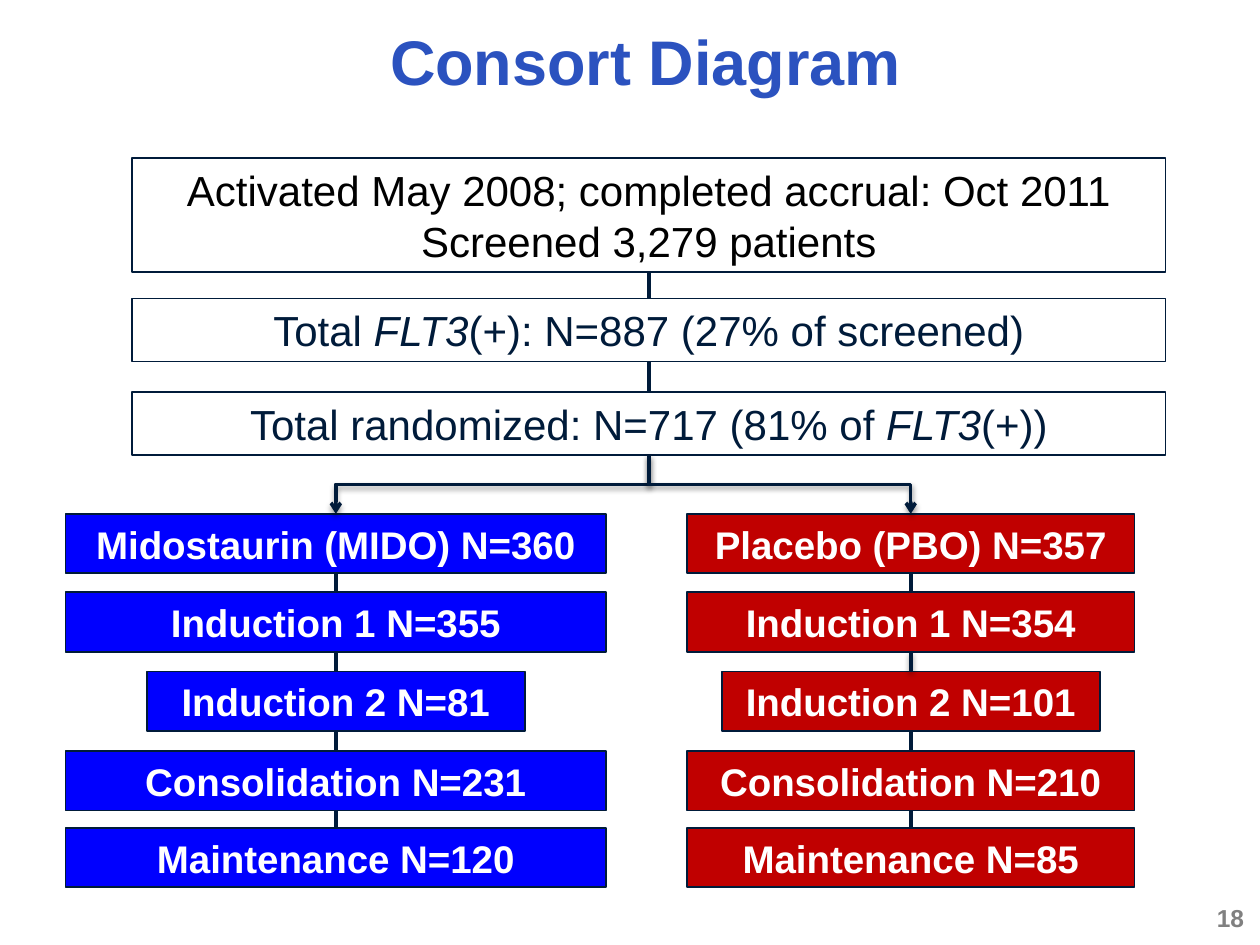
import pptx
import pptx.util
import pptx.dml.color
import pptx.enum.shapes
import pptx.enum.text
import pptx.oxml
import pptx.oxml.ns

Cm = pptx.util.Cm
Pt = pptx.util.Pt
rgb = pptx.dml.color.RGBColor.from_string
qn = pptx.oxml.ns.qn
CONNECTOR = pptx.enum.shapes.MSO_CONNECTOR
CENTER = pptx.enum.text.PP_ALIGN.CENTER
LEFT = pptx.enum.text.PP_ALIGN.LEFT
MIDDLE = pptx.enum.text.MSO_ANCHOR.MIDDLE
NAVY = "001B3A"
NAMESPACE = 'xmlns:a="http://schemas.openxmlformats.org/drawingml/2006/main"'
SHADOW = (
    '<a:outerShdw blurRad="40000" dist="20000" dir="5400000" rotWithShape="0">'
    '<a:srgbClr val="000000"><a:alpha val="38000"/></a:srgbClr></a:outerShdw>'
)


def write(frame, lines, color, font_format, align=CENTER):
    frame.word_wrap = True
    frame.vertical_anchor = MIDDLE
    for index, pieces in enumerate(lines):
        paragraph = frame.paragraphs[0] if index == 0 else frame.add_paragraph()
        paragraph.alignment = align
        for piece in pieces:
            run = paragraph.add_run()
            run.text = piece
            run.font.color.rgb = rgb(color)
            for attribute, value in font_format.items():
                setattr(run.font, attribute, value)
            run.font.italic = piece == "FLT3"


def connect(kind, start, end, width, shadowed=False):
    link = slide.shapes.add_connector(kind, *[Cm(v) for v in start + end])
    link.line.color.rgb = rgb(NAVY)
    link.line.width = Pt(width)
    effects = SHADOW if shadowed else ""
    link._element.spPr.append(
        pptx.oxml.parse_xml(f"<a:effectLst {NAMESPACE}>{effects}</a:effectLst>")
    )
    return link


deck = pptx.Presentation()
deck.slide_width = Cm(25.4)
deck.slide_height = Cm(19.05)
slide = deck.slides.add_slide(deck.slide_layouts[6])

title_format = {"name": "Arial", "size": Pt(36), "bold": True}
summary_format = {"name": "Arial", "size": Pt(24), "bold": False}
stage_format = {"name": "Arial", "size": Pt(22), "bold": True}
number_format = {"name": "Arial", "size": Pt(14), "bold": True}

title = slide.shapes.add_textbox(Cm(2.54), Cm(0.33), Cm(20.95), Cm(1.78))
write(title.text_frame, [["Consort Diagram"]], "2B52BF", title_format)
page_number = slide.shapes.add_textbox(Cm(24.28), Cm(18.16), Cm(1.12), Cm(0.69))
page_number.text_frame.word_wrap = True
write(page_number.text_frame, [["18"]], "808080", number_format, LEFT)

trunk = 13.08
summary_width = 20.83
summaries = [
    (3.18, 2.31, "000000", [["Activated May 2008; completed accrual: Oct 2011"],
                            ["Screened 3,279 patients"]]),
    (6.02, 1.27, NAVY, [["Total ", "FLT3", "(+): N=887 (27% of screened)"]]),
    (7.9, 1.27, NAVY, [["Total randomized: N=717 (81% of ", "FLT3", "(+))"]]),
]
boxes = [
    (trunk, top, summary_width, height, None, color, lines, summary_format)
    for top, height, color, lines in summaries
]

stage_tops = [10.36, 11.94, 13.54, 15.14, 16.69]
stage_height = 1.2
short_stage = 2
short_width = 7.62
arms = [
    (6.77, 10.9, "0000FF", ["Midostaurin (MIDO) N=360", "Induction 1 N=355",
                            "Induction 2 N=81", "Consolidation N=231",
                            "Maintenance N=120"]),
    (18.36, 9.02, "C00000", ["Placebo (PBO) N=357", "Induction 1 N=354",
                             "Induction 2 N=101", "Consolidation N=210",
                             "Maintenance N=85"]),
]
for center, arm_width, fill, stages in arms:
    for index, (top, stage) in enumerate(zip(stage_tops, stages)):
        width = short_width if index == short_stage else arm_width
        boxes.append((center, top, width, stage_height, fill, "FFFFFF",
                      [[stage]], stage_format))

for center, top, width, height, fill, color, lines, font_format in boxes:
    box = slide.shapes.add_shape(
        pptx.enum.shapes.MSO_SHAPE.RECTANGLE,
        Cm(center - width / 2), Cm(top), Cm(width), Cm(height),
    )
    box.shadow.inherit = False
    box.line.color.rgb = rgb(NAVY)
    box.line.width = Pt(1)
    if fill:
        box.fill.solid()
        box.fill.fore_color.rgb = rgb(fill)
    else:
        box.fill.background()
    write(box.text_frame, lines, color, font_format)

for upper, lower in zip(summaries, summaries[1:]):
    connect(CONNECTOR.STRAIGHT, (trunk, upper[0] + upper[1]), (trunk, lower[0]), 2.25)

split_top = summaries[-1][0] + summaries[-1][1]
drop = stage_tops[0] - split_top
for center, arm_width, fill, stages in arms:
    to_right = center > trunk
    for index, (upper, lower) in enumerate(zip(stage_tops, stage_tops[1:])):
        connect(CONNECTOR.STRAIGHT, (center, upper + stage_height), (center, lower),
                2.25, shadowed=to_right and index == 1)

    middle_x = (trunk + center) / 2
    middle_y = split_top + drop / 2
    reach = abs(center - trunk)
    side = 1 if to_right else -1
    branch = connect(
        CONNECTOR.ELBOW,
        (middle_x + side * drop / 2, middle_y - reach / 2),
        (middle_x - side * drop / 2, middle_y + reach / 2),
        2, shadowed=True,
    )
    turn = 270 if to_right else 90
    branch._element.spPr.find(qn("a:xfrm")).set("rot", str(turn * 60000))
    branch.line._get_or_add_ln().append(
        pptx.oxml.parse_xml(f'<a:tailEnd {NAMESPACE} type="arrow"/>')
    )

deck.save("out.pptx")
